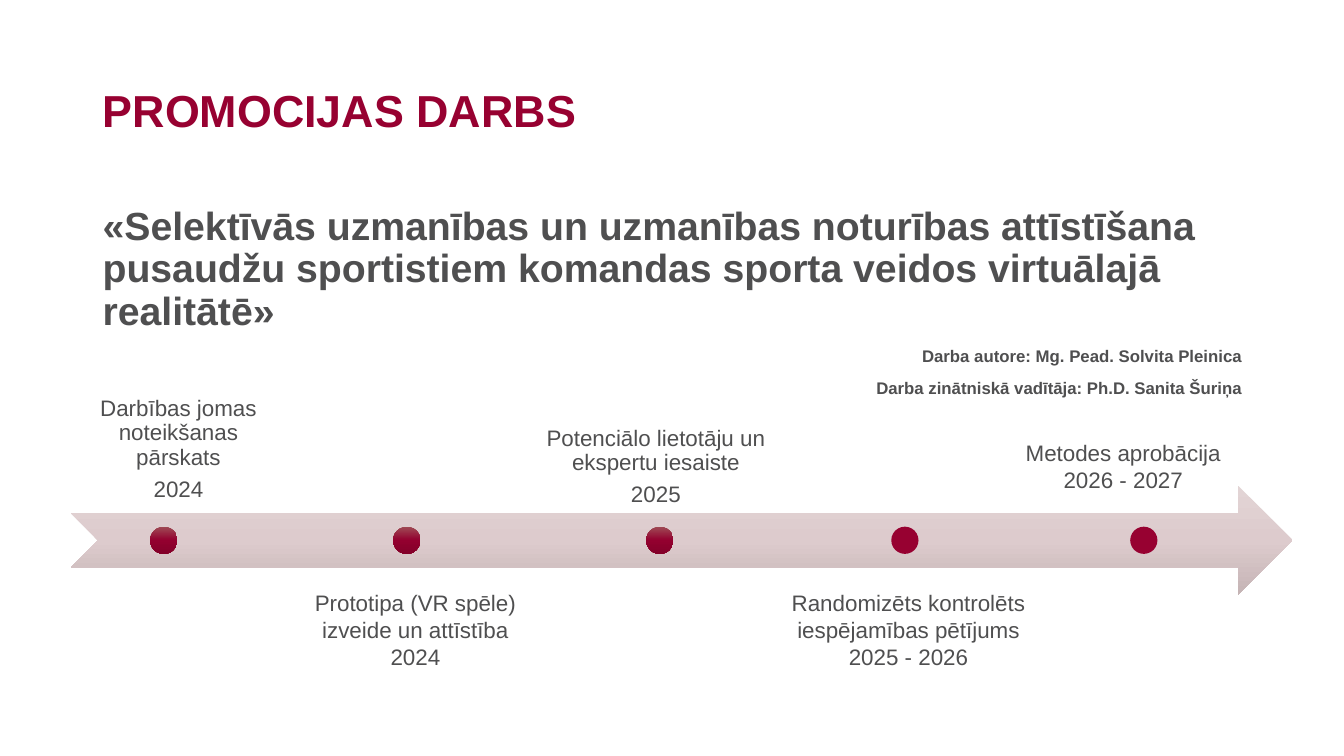
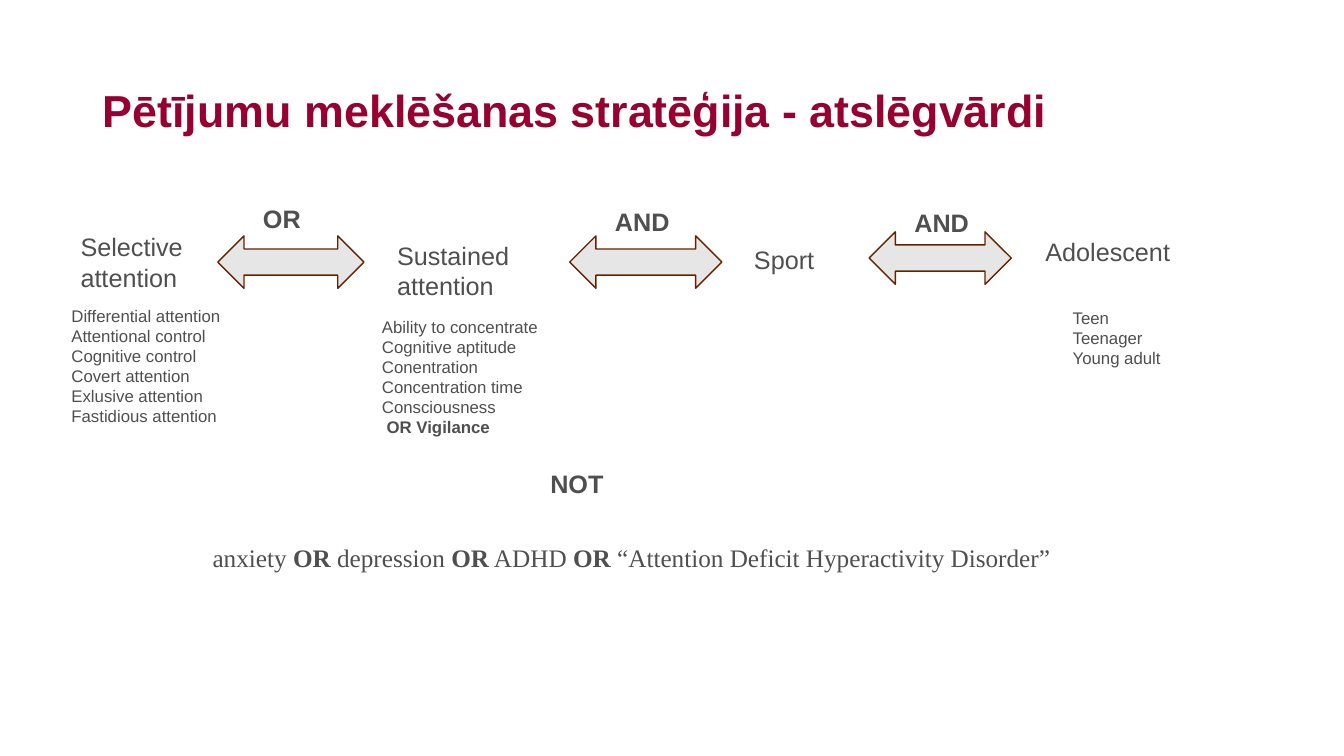
from copy import deepcopy

from pptx import Presentation
from pptx.dml.color import RGBColor
from pptx.enum.shapes import MSO_SHAPE
from pptx.enum.text import MSO_ANCHOR, MSO_AUTO_SIZE, PP_ALIGN
from pptx.oxml.ns import qn
from pptx.util import Inches, Pt

CRIMSON = RGBColor(0x97, 0x01, 0x31)
TEXT_GREY = RGBColor(0x4F, 0x4F, 0x50)
ARROW_GREY = RGBColor(0xE7, 0xE6, 0xE6)
ARROW_EDGE = RGBColor(0x63, 0x23, 0x00)
BAND_SHADES = [RGBColor(0xE2, 0xD4, 0xD5), RGBColor(0xDD, 0xCB, 0xCD),
               RGBColor(0xC5, 0xB4, 0xB5)]
DOT_SHADES = [RGBColor(0x9F, 0x4B, 0x55), RGBColor(0x93, 0x00, 0x2F),
              RGBColor(0x83, 0x00, 0x29)]

SANS, SERIF = "Arial", "Times New Roman"
LEFT, CENTER, RIGHT = PP_ALIGN.LEFT, PP_ALIGN.CENTER, PP_ALIGN.RIGHT
TOP, MIDDLE, BOTTOM = MSO_ANCHOR.TOP, MSO_ANCHOR.MIDDLE, MSO_ANCHOR.BOTTOM
NO_AUTOFIT = MSO_AUTO_SIZE.NONE
NOTCHED_ARROW = MSO_SHAPE.NOTCHED_RIGHT_ARROW
DOUBLE_ARROW = MSO_SHAPE.LEFT_RIGHT_ARROW
OVAL = MSO_SHAPE.OVAL

DOT_SIZE = 0.27
DOUBLE_ARROW_HEIGHT = 0.52
TITLE_BOX = (0.92, 0.4, 11.5, 1.45)


def inches(box):
    return [Inches(length) for length in box]


def style(paragraph, size, bold=False, font=SANS, color=TEXT_GREY,
          align=LEFT, spacing=1.0):
    paragraph.alignment = align
    paragraph.line_spacing = spacing
    paragraph.font.name = font
    paragraph.font.size = Pt(size)
    paragraph.font.bold = bold
    paragraph.font.color.rgb = color


def add_slide(prs, title):
    slide = prs.slides.add_slide(prs.slide_layouts[5])
    heading = slide.shapes.title
    heading.left, heading.top, heading.width, heading.height = inches(TITLE_BOX)
    frame = heading.text_frame
    frame.text = title
    frame.auto_size = NO_AUTOFIT
    frame.vertical_anchor = MIDDLE
    style(frame.paragraphs[0], 32, bold=True, color=CRIMSON, spacing=0.9)
    return slide


def add_text(slide, box, lines, size, anchor=TOP, inset=None, gap=0, **look):
    frame = slide.shapes.add_textbox(*inches(box)).text_frame
    frame.word_wrap = True
    frame.vertical_anchor = anchor
    if inset is not None:
        frame.margin_left = frame.margin_right = Inches(inset)
        frame.margin_top = frame.margin_bottom = Inches(inset)
    for index, line in enumerate(lines):
        paragraph = frame.paragraphs[0] if index == 0 else frame.add_paragraph()
        paragraph.text = line
        style(paragraph, size, **look)
        if index:
            paragraph.space_before = Pt(gap)
    return frame


def add_figure(slide, kind, box):
    figure = slide.shapes.add_shape(kind, *inches(box))
    figure.shadow.inherit = False
    figure.line.fill.background()
    return figure


def shade_downwards(figure, shades):
    """Fill with evenly spaced gradient stops from top to bottom."""
    fill = figure.fill
    fill.gradient()
    fill.gradient_angle = 270
    stop_list = figure._element.spPr.find(qn("a:gradFill")).find(qn("a:gsLst"))
    while len(stop_list) < len(shades):
        stop_list.append(deepcopy(stop_list[0]))
    for index, (stop, shade) in enumerate(zip(fill.gradient_stops, shades)):
        stop.position = index / (len(shades) - 1)
        stop.color.rgb = shade


def add_thesis(slide, box, topic, credits):
    frame = add_text(slide, box, [topic], 28, bold=True, spacing=0.9)
    for credit in credits:
        paragraph = frame.add_paragraph()
        paragraph.text = credit
        style(paragraph, 12, bold=True, align=RIGHT, spacing=0.9)
        paragraph.space_before = Pt(10)


def add_timeline(slide, box):
    left, top, _, height = box
    shade_downwards(add_figure(slide, NOTCHED_ARROW, box), BAND_SHADES)

    dot_top = top + (height - DOT_SIZE) / 2
    dots = [(0.79, True), (3.2, True), (5.71, True), (8.14, False), (10.51, False)]
    for offset, shaded in dots:
        dot = add_figure(slide, OVAL, (left + offset, dot_top, DOT_SIZE, DOT_SIZE))
        if shaded:
            shade_downwards(dot, DOT_SHADES)
        else:
            dot.fill.solid()
            dot.fill.fore_color.rgb = CRIMSON

    tight = {"inset": 0.12, "gap": 5.6, "spacing": 0.9}
    stages = [
        ((0, -0.65, 2.14, 0.93), "Darbības jomas noteikšanas pārskats", "2024",
         {"anchor": BOTTOM, **tight}),
        ((2.26, 0.98, 2.32, 0.91), "Prototipa (VR spēle) izveide un attīstība",
         "2024", {}),
        ((4.5, -0.7, 2.61, 0.75), "Potenciālo lietotāju un ekspertu iesaiste",
         "2025", tight),
        ((6.95, 0.98, 2.72, 0.91),
         "Randomizēts kontrolēts iespējamības pētījums", "2025 - 2026", {}),
        ((9.28, -0.51, 2.32, 0.64), "Metodes aprobācija", "2026 - 2027", {}),
    ]
    for (dx, dy, width, label_height), stage, years, look in stages:
        add_text(slide, (left + dx, top + dy, width, label_height),
                 [stage, years], 16, align=CENTER, **look)


def add_keyword(slide, box, term, synonyms=(), list_offset=(0, 0)):
    """Place a search term with its synonyms listed at an offset below."""
    left, top = box[:2]
    add_text(slide, box, [term], 18)
    if synonyms:
        dx, dy = list_offset
        add_text(slide, (left + dx, top + dy, 1.91, 0.1 + 0.2 * len(synonyms)),
                 synonyms, 12)


def add_operator(slide, left, top, width, word, rise):
    """Place a double arrow and its operator, raised above the arrow's top."""
    arrow = add_figure(slide, DOUBLE_ARROW, (left, top, width, DOUBLE_ARROW_HEIGHT))
    arrow.fill.solid()
    arrow.fill.fore_color.rgb = ARROW_GREY
    arrow.line.color.rgb = ARROW_EDGE
    arrow.line.width = Pt(1)
    add_text(slide, (left + 0.35, top - rise, 0.75, 0.4), [word], 18, bold=True)


def add_exclusions(slide, box):
    left, top, width, height = box
    add_text(slide, (left + 3.35, top, 0.8, 0.4), ["NOT"], 18, bold=True)
    terms_box = (left, top + 0.73, width, height - 0.73)
    paragraph = add_text(slide, terms_box, [""], 18, font=SERIF).paragraphs[0]
    terms = ["anxiety", "depression", "ADHD",
             "“Attention Deficit Hyperactivity Disorder”"]
    for index, term in enumerate(terms):
        if index:
            paragraph.add_run().text = " "
            operator = paragraph.add_run()
            operator.text = "OR"
            operator.font.bold = True
            term = " " + term
        paragraph.add_run().text = term


def build_thesis_slide(prs):
    slide = add_slide(prs, "PROMOCIJAS DARBS")
    add_thesis(
        slide, (0.92, 2, 11.5, 2.1),
        "«Selektīvās uzmanības un uzmanības noturības attīstīšana pusaudžu "
        "sportistiem komandas sporta veidos virtuālajā realitātē»",
        ["Darba autore: Mg. Pead. Solvita Pleinica",
         "Darba zinātniskā vadītāja: Ph.D. Sanita Šuriņa"])
    add_timeline(slide, (0.7, 4.82, 12.12, 1.08))


def build_keyword_slide(prs):
    slide = add_slide(prs, "Pētījumu meklēšanas stratēģija - atslēgvārdi")
    add_keyword(slide, (0.7, 2.25, 1.45, 0.71), "Selective attention",
                ["Differential attention", "Attentional control",
                 "Cognitive control", "Covert attention",
                 "Exlusive attention", "Fastidious attention"], (-0.09, 0.73))
    add_keyword(slide, (3.84, 2.33, 1.93, 0.71), "Sustained attention",
                ["Ability to concentrate", "Cognitive aptitude",
                 "Conentration", "Concentration time", "Consciousness",
                 " OR Vigilance"], (-0.15, 0.76))
    vigilance = slide.shapes[-1].text_frame.paragraphs[-1]
    vigilance.font.bold = True
    add_keyword(slide, (7.38, 2.37, 1.13, 0.4), "Sport")
    add_keyword(slide, (10.27, 2.3, 1.66, 0.4), "Adolescent",
                ["Teen", "Teenager", "Young adult"], (0.27, 0.7))

    add_operator(slide, 2.16, 2.34, 1.45, "OR", 0.37)
    add_operator(slide, 5.65, 2.34, 1.51, "AND", 0.34)
    add_operator(slide, 8.62, 2.3, 1.41, "AND", 0.29)
    add_exclusions(slide, (2.01, 4.6, 9, 1.13))


def main():
    prs = Presentation()
    prs.slide_width, prs.slide_height = Inches(13.33), Inches(7.5)
    build_thesis_slide(prs)
    build_keyword_slide(prs)
    prs.save("out.pptx")


if __name__ == "__main__":
    main()
